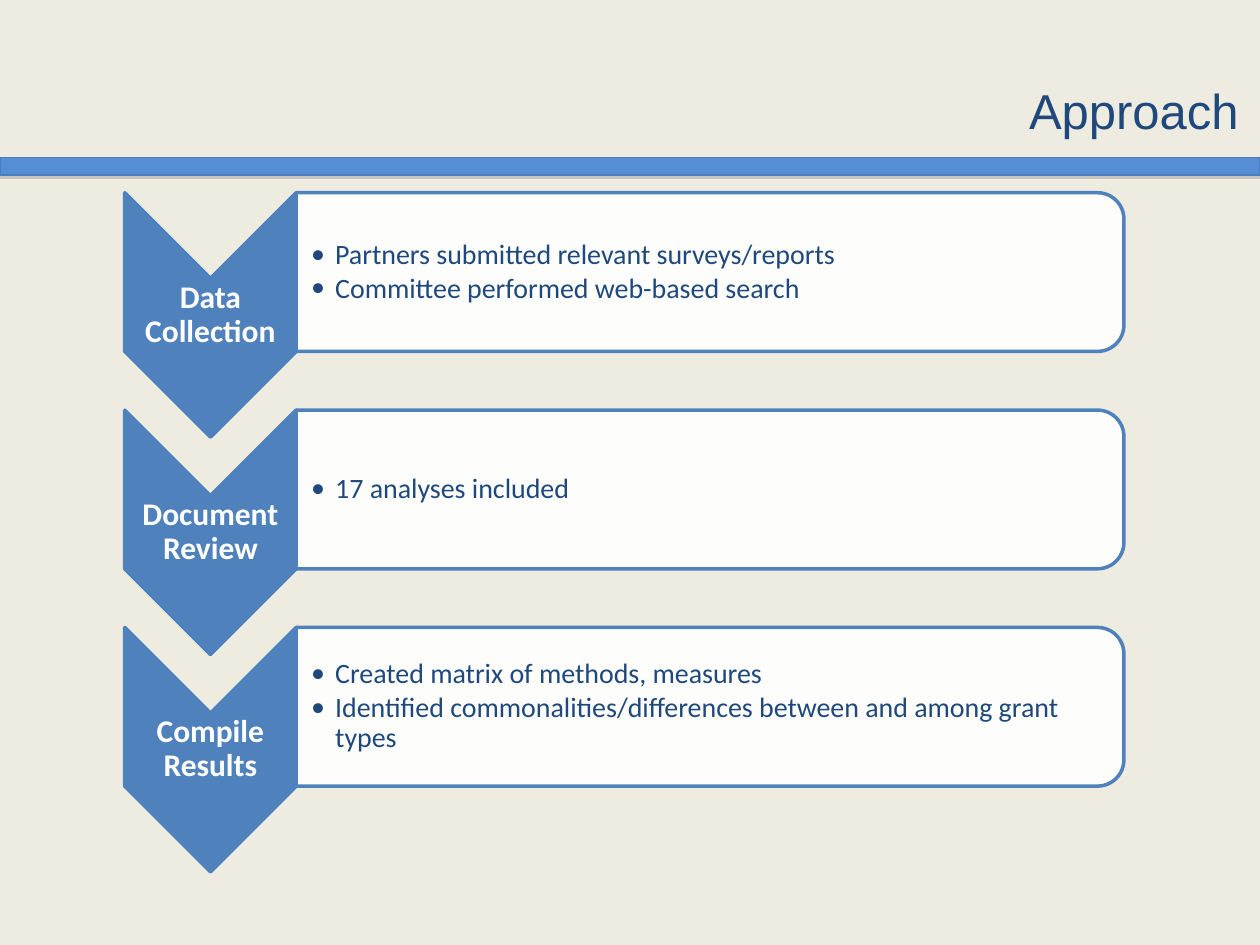
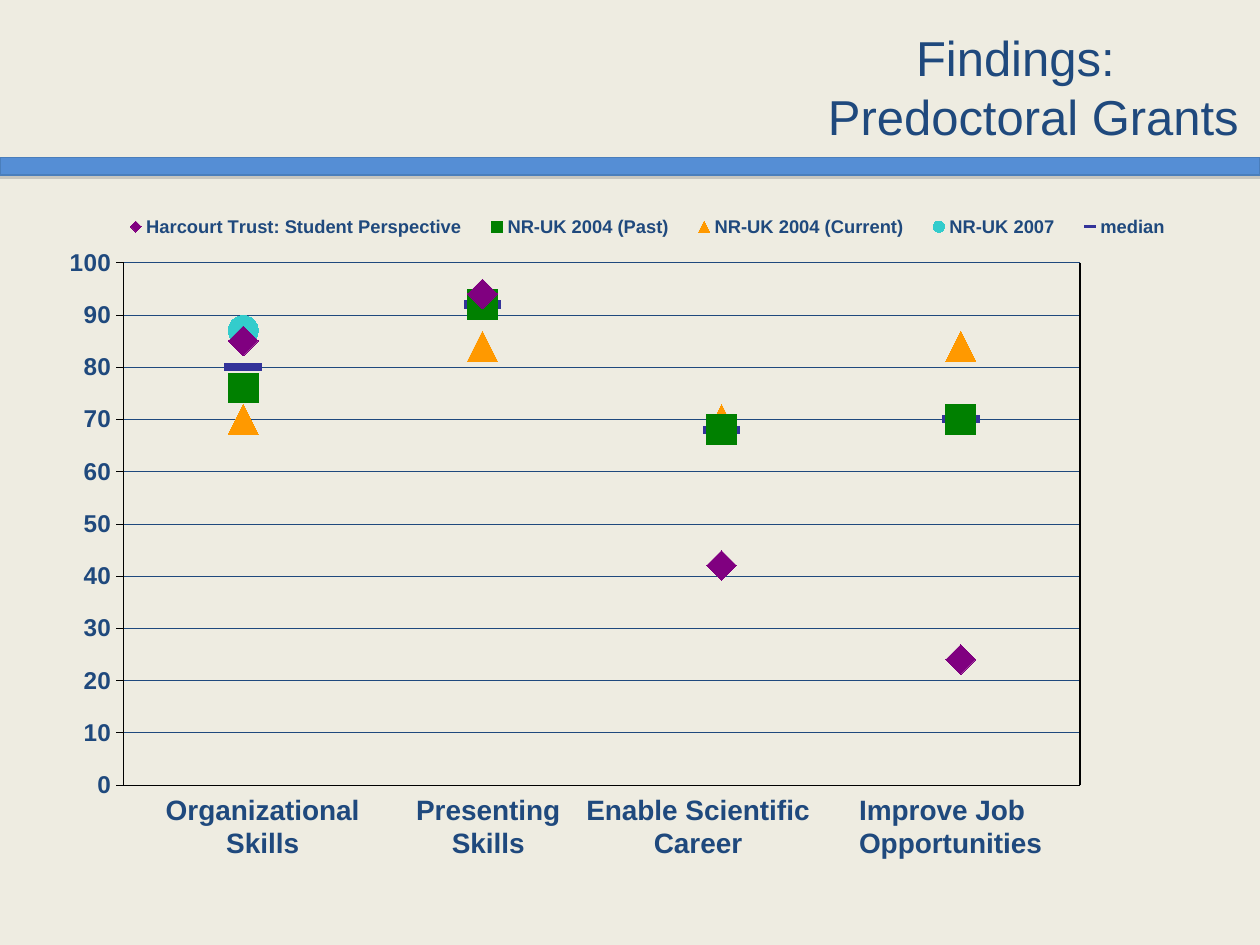
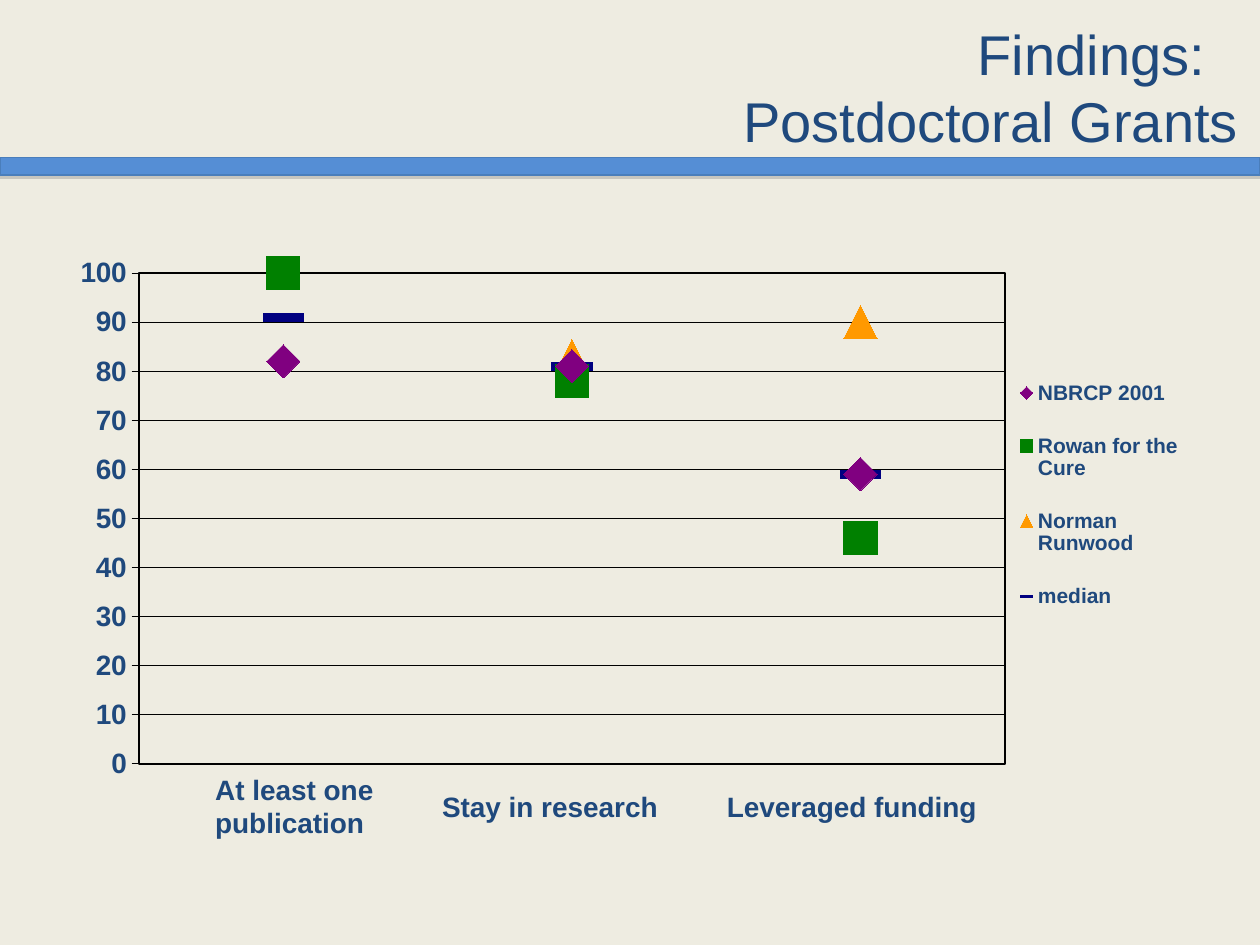
from lxml.etree import SubElement
from pptx import Presentation
from pptx.chart.data import XyChartData
from pptx.dml.color import RGBColor
from pptx.enum.chart import (
    XL_CHART_TYPE, XL_LEGEND_POSITION as LEGEND, XL_MARKER_STYLE as MARKER,
    XL_TICK_LABEL_POSITION as TICK_LABEL, XL_TICK_MARK as TICK)
from pptx.enum.shapes import MSO_CONNECTOR, MSO_SHAPE
from pptx.enum.text import MSO_ANCHOR, MSO_AUTO_SIZE, PP_ALIGN
from pptx.oxml.ns import qn
from pptx.util import Inches, Pt

CREAM = RGBColor(0xEE, 0xEC, 0xE1)
NAVY = RGBColor(0x1F, 0x49, 0x7D)
BAND = RGBColor(0x55, 0x8E, 0xD5)
BAND_EDGE = RGBColor(0x4A, 0x7E, 0xBB)
STEP = RGBColor(0x4F, 0x81, 0xBD)
WHITE = RGBColor(0xFF, 0xFF, 0xFF)
BLACK = RGBColor(0, 0, 0)
PURPLE = RGBColor(0x80, 0, 0x80)
GREEN = RGBColor(0, 0x80, 0)
ORANGE = RGBColor(0xFF, 0x99, 0)
AQUA = RGBColor(0x33, 0xCC, 0xCC)
INDIGO = RGBColor(0x33, 0x33, 0x99)
DARK_BLUE = RGBColor(0, 0, 0x80)


def set_indent(p, left, first=0):
    """Set the left margin of a paragraph and the indent of its first line."""
    pPr = p._p.get_or_add_pPr()
    pPr.set("marL", str(Inches(left)))
    pPr.set("indent", str(Inches(first)))
    return pPr


def write(tf, text, size=16, font="Arial", color=NAVY, bold=False,
          align=PP_ALIGN.LEFT, spacing=None, after=None, bullet=False):
    """Write each line of text as a formatted paragraph."""
    for i, line in enumerate(text.split("\n")):
        p = tf.paragraphs[0] if i == 0 else tf.add_paragraph()
        if bullet:
            pPr = set_indent(p, 0.19, -0.19)
            SubElement(pPr, qn("a:buFont")).set("typeface", font)
            SubElement(pPr, qn("a:buChar")).set("char", "•")
        p.alignment = align
        p.line_spacing = spacing
        p.space_after = after
        r = p.add_run()
        r.text = line
        r.font.size, r.font.name, r.font.bold = Pt(size), font, bold
        r.font.color.rgb = color


def add_text(slide, box, text, inset=None, wrap=True, anchor=MSO_ANCHOR.TOP, **fmt):
    """Add a text box; inset gives the left and the other margins."""
    tf = slide.shapes.add_textbox(*map(Inches, box)).text_frame
    tf.word_wrap, tf.vertical_anchor = wrap, anchor
    if inset:
        tf.margin_left = Inches(inset[0])
        tf.margin_top = tf.margin_right = tf.margin_bottom = Inches(inset[1])
    write(tf, text, **fmt)


def add_shape(slide, kind, box, fill, line, width, turned=False):
    """Add a flat shape that fills the box, turned a quarter if asked."""
    x, y, w, h = box
    if turned:
        x, y, w, h = x + (w - h) / 2, y + (h - w) / 2, h, w
    sp = slide.shapes.add_shape(kind, *map(Inches, (x, y, w, h)))
    sp.rotation = 90 if turned else 0
    sp.shadow.inherit = False
    sp.fill.solid()
    sp.fill.fore_color.rgb = fill
    sp.line.color.rgb = line
    sp.line.width = Pt(width)
    return sp


def set_alpha(parent, percent):
    """Set the opacity of the colour below an element."""
    color = next(parent.iter(qn("a:srgbClr")))
    SubElement(color, qn("a:alpha")).set("val", str(percent * 1000))


def build_master(prs, slide):
    """Give the master its background and its shadowed band."""
    master = prs.slide_master
    master.background.fill.solid()
    master.background.fill.fore_color.rgb = CREAM
    band = add_shape(slide, MSO_SHAPE.RECTANGLE, (0, 1.25, 10, 0.14), BAND, BAND_EDGE, 0.75)
    effects = band._element.spPr.find(qn("a:effectLst"))
    shadow = SubElement(effects, qn("a:outerShdw"), dist=str(Pt(1.8)),
                        dir="5400000", rotWithShape="0")
    SubElement(shadow, qn("a:srgbClr")).set("val", "808080")
    set_alpha(shadow, 35)
    master.shapes.element.insert(2, band._element)


def add_title(slide, text, top=0.11, size=28, first_indent=None):
    """Place the title, with its first line indented if asked."""
    title = slide.shapes.title
    title.left, title.top, title.width, title.height = map(Inches, (5.1, top, 4.83, 1.15))
    tf = title.text_frame
    tf.auto_size, tf.vertical_anchor = MSO_AUTO_SIZE.NONE, MSO_ANCHOR.MIDDLE
    write(tf, text, size=size, align=PP_ALIGN.RIGHT)
    for p in tf.paragraphs:
        set_indent(p, 0)
    if first_indent:
        tf.paragraphs[0].alignment = PP_ALIGN.LEFT
        set_indent(tf.paragraphs[0], first_indent)


def add_step(slide, x, y, label, points):
    """Draw one step: a chevron with its label and a panel of points."""
    add_shape(slide, MSO_SHAPE.CHEVRON, (x, y, 1.36, 1.94), STEP, STEP, 2, turned=True)
    add_text(slide, (x, y + 0.68, 1.36, 0.58), label, inset=(0.01, 0.01),
             anchor=MSO_ANCHOR.MIDDLE, size=18, font="Calibri", color=WHITE,
             bold=True, align=PP_ALIGN.CENTER, spacing=0.9)
    panel = add_shape(slide, MSO_SHAPE.ROUND_2_SAME_RECTANGLE,
                      (x + 1.36, y, 6.57, 1.26), WHITE, STEP, 2, turned=True)
    set_alpha(panel._element.spPr.find(qn("a:solidFill")), 90)
    add_text(slide, (x + 1.36, y + 0.06, 6.51, 1.14), points, inset=(0.12, 0.01),
             anchor=MSO_ANCHOR.MIDDLE, font="Calibri", spacing=0.9, after=Pt(2), bullet=True)


def set_layout(parent, x, y, w, h, inner=False):
    """Fix the place of a chart part as fractions of the chart."""
    for old in parent.findall(qn("c:layout")):
        parent.remove(old)
    layout = parent.makeelement(qn("c:layout"))
    parent.insert(0 if inner else 1, layout)
    manual = SubElement(layout, qn("c:manualLayout"))
    if inner:
        SubElement(manual, qn("c:layoutTarget")).set("val", "inner")
    for name in ("xMode", "yMode"):
        SubElement(manual, qn("c:" + name)).set("val", "edge")
    for name, value in zip("xywh", (x, y, w, h)):
        SubElement(manual, qn("c:" + name)).set("val", str(value))


def style_line(line, color, width):
    """Set the colour and width of a line."""
    line.color.rgb = color
    line.width = Pt(width)


def add_scatter(slide, box, series, plot_box, legend_box, marker_size, axis_size,
                legend_size, legend_at, grid):
    """Add a marker chart of findings, one x position per outcome."""
    data = XyChartData()
    for name, values, _, _ in series:
        s = data.add_series(name)
        for x, value in enumerate(values, 1):
            if value is not None:
                s.add_data_point(x, value)
    chart = slide.shapes.add_chart(XL_CHART_TYPE.XY_SCATTER, *map(Inches, box), data).chart
    chart.has_title = False
    chart.font.name, chart.font.bold, chart.font.size = "Arial", True, Pt(axis_size)
    chart.font.color.rgb = NAVY
    chart.has_legend = True
    chart.legend.position = legend_at
    chart.legend.include_in_layout = False
    chart.legend.font.size = Pt(legend_size)
    chart.plots[0].vary_by_categories = False

    x_axis, y_axis = chart.category_axis, chart.value_axis
    x_axis.minimum_scale, x_axis.maximum_scale = 0.5, len(series[0][1]) + 0.5
    x_axis.major_unit = 1
    x_axis.has_major_gridlines = False
    x_axis.tick_label_position = TICK_LABEL.NONE
    x_axis.major_tick_mark = TICK.NONE
    y_axis.minimum_scale, y_axis.maximum_scale, y_axis.major_unit = 0, 100, 10
    y_axis.major_tick_mark = TICK.OUTSIDE
    y_axis.tick_labels.font.size = Pt(axis_size)
    y_axis.has_major_gridlines = True
    style_line(y_axis.major_gridlines.format.line, grid, 0.25)
    for axis in (x_axis, y_axis):
        style_line(axis.format.line, BLACK, 0.25)

    for s, (_, _, style, color) in zip(chart.plots[0].series, series):
        s.smooth = False
        s.format.line.fill.background()
        s.marker.style = style
        s.marker.size = marker_size + (4 if style == MARKER.DASH else 0)
        s.marker.format.fill.solid()
        s.marker.format.fill.fore_color.rgb = color
        s.marker.format.line.color.rgb = color
    set_layout(chart._chartSpace.chart.plotArea, *plot_box, inner=True)
    set_layout(chart.legend._element, *legend_box)
    return chart


def add_outcomes(slide, y, outcomes):
    """Write the outcome names under a chart, centred on one line of height."""
    for text, x, width, align in outcomes:
        height = 0.64 if "\n" in text else 0.37
        add_text(slide, (x, y - height / 2, width, height), text,
                 wrap=False, bold=True, align=align)


def build_approach(slide):
    """Fill the slide of three steps."""
    add_title(slide, "Approach", top=0.3)
    steps = [
        ("Data Collection",
         "Partners submitted relevant surveys/reports\nCommittee performed web-based search"),
        ("Document Review", "17 analyses included"),
        ("Compile Results",
         "Created matrix of methods, measures\n"
         "Identified commonalities/differences between and among grant types"),
    ]
    for i, (label, points) in enumerate(steps):
        add_step(slide, 0.99, 1.53 + 1.725 * i, label, points)


def build_predoctoral(slide):
    """Fill the slide of predoctoral findings."""
    series = [
        ("Harcourt Trust: Student Perspective", (85, 94, 42, 24), MARKER.DIAMOND, PURPLE),
        ("NR-UK 2004 (Past)", (76, 92, 68, 70), MARKER.SQUARE, GREEN),
        ("NR-UK 2004 (Current)", (70, 84, 70, 84), MARKER.TRIANGLE, ORANGE),
        ("NR-UK 2007", (87, 92, None, None), MARKER.CIRCLE, AQUA),
        ("median", (80, 92, 68, 70), MARKER.DASH, INDIGO),
    ]
    add_scatter(slide, (0.26, 1.68, 9.76, 4.76), series, (0.074, 0.085, 0.778, 0.871),
                (0.06, 0, 0.88, 0.05), 17, 13.9, 10.5, LEGEND.TOP, NAVY)
    edge = slide.shapes.add_connector(MSO_CONNECTOR.STRAIGHT,
                                      *map(Inches, (8.57, 2.09, 8.57, 6.23)))
    style_line(edge.line, BLACK, 1)
    SubElement(edge._element.spPr, qn("a:effectLst"))
    add_outcomes(slide, 6.56, [
        ("Organizational\nSkills", 1.21, 1.75, PP_ALIGN.CENTER),
        ("Presenting\nSkills", 3.2, 1.35, PP_ALIGN.CENTER),
        ("Enable Scientific\nCareer", 4.55, 1.98, PP_ALIGN.CENTER),
        ("Improve Job\nOpportunities", 6.72, 1.66, PP_ALIGN.LEFT),
    ])
    add_title(slide, "Findings:\nPredoctoral Grants", first_indent=2.07)


def build_postdoctoral(slide):
    """Fill the slide of postdoctoral findings."""
    series = [
        ("NBRCP 2001", (82, 81, 59), MARKER.DIAMOND, PURPLE),
        ("Rowan for the Cure", (100, 78, 46), MARKER.SQUARE, GREEN),
        ("Norman Runwood", (None, 83, 90), MARKER.TRIANGLE, ORANGE),
        ("median", (91, 81, 59), MARKER.DASH, DARK_BLUE),
    ]
    chart = add_scatter(slide, (0.48, 1.83, 9.03, 4.56), series, (0.069, 0.074, 0.761, 0.854),
                        (0.838, 0.21, 0.15, 0.5), 19, 16, 12, LEGEND.RIGHT, BLACK)
    spPr = SubElement(chart._chartSpace.chart.plotArea, qn("c:spPr"))
    SubElement(spPr, qn("a:noFill"))
    border = SubElement(spPr, qn("a:ln"), w=str(Pt(1)))
    SubElement(SubElement(border, qn("a:solidFill")), qn("a:srgbClr")).set("val", str(BLACK))
    add_outcomes(slide, 6.4, [
        ("At least one\npublication", 1.61, 1.46, PP_ALIGN.LEFT),
        ("Stay in research", 3.41, 1.92, PP_ALIGN.LEFT),
        ("Leveraged funding", 5.67, 2.19, PP_ALIGN.LEFT),
    ])
    add_title(slide, "Findings:\nPostdoctoral Grants", size=32, first_indent=2.56)


def main():
    """Build the slides and save them."""
    prs = Presentation()
    prs.slide_width, prs.slide_height = Inches(10), Inches(7.5)
    builders = (build_approach, build_predoctoral, build_postdoctoral)
    slides = [prs.slides.add_slide(prs.slide_layouts[5]) for _ in builders]
    build_master(prs, slides[0])
    for build, slide in zip(builders, slides):
        build(slide)
    prs.save("out.pptx")


if __name__ == "__main__":
    main()
